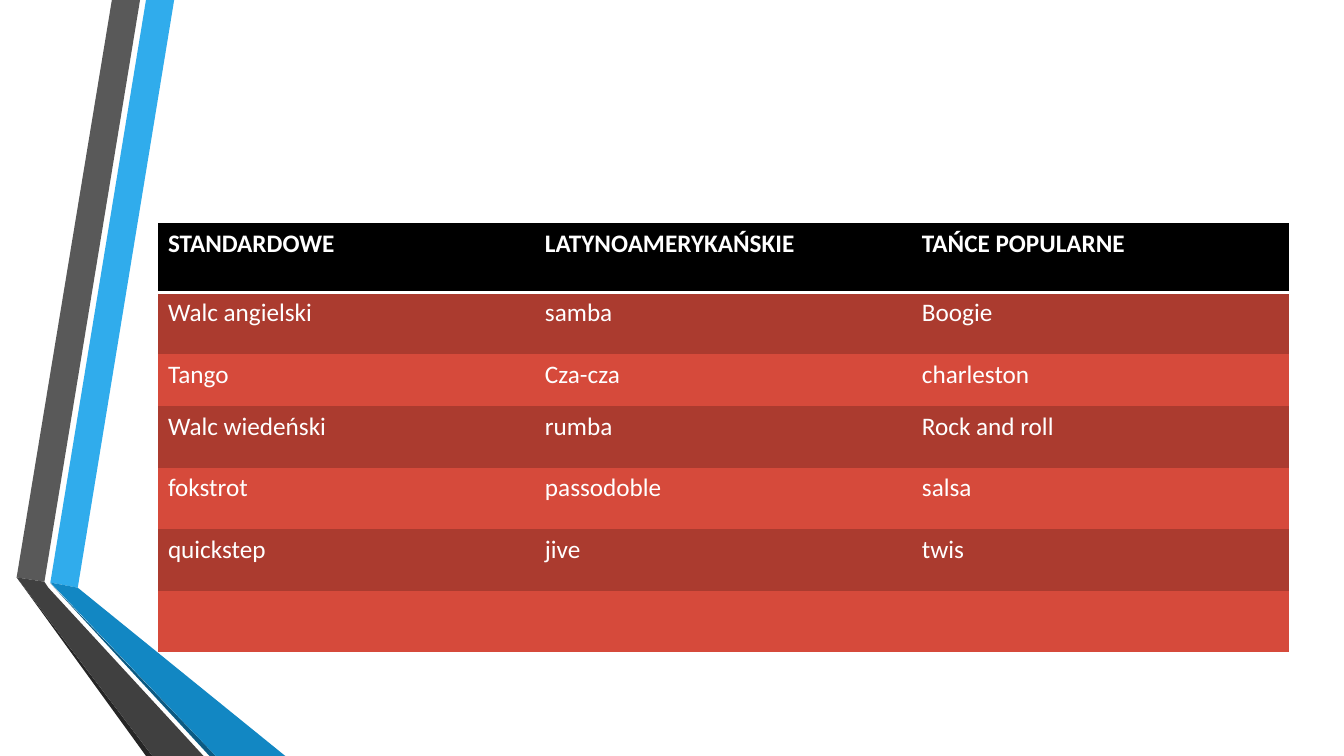
"""Build a slide with a table of ballroom, Latin and popular dances beside a folded ribbon."""
from lxml import etree
from pptx import Presentation
from pptx.dml.color import RGBColor
from pptx.oxml import parse_xml
from pptx.oxml.ns import nsdecls, qn
from pptx.util import Cm, Pt

WIDTH, HEIGHT = 33.87, 19.05
NO_STYLE = "{2D5ABB26-0587-4C30-8999-92F81FD0307C}"
WHITE, BLACK = "FFFFFF", "000000"
BANDS = ["AB3B2F", "D64A3B"]


def color(value):
    return RGBColor.from_string(value)


def write(cell, text, size=18, bold=False, font="Calibri", ink=WHITE):
    paragraph = cell.text_frame.paragraphs[0]
    run = paragraph.add_run()
    run.text = text
    run.font.size = Pt(size)
    run.font.bold = bold
    run.font.name = font
    run.font.color.rgb = color(ink)


presentation = Presentation()
presentation.slide_width = Cm(WIDTH)
presentation.slide_height = Cm(HEIGHT)
slide = presentation.slides.add_slide(presentation.slide_layouts[6])

ribbons = [
    ("30ACEC", [(1.27, 14.68), (1.96, 14.81), (4.39, 0), (3.68, 0)]),
    ("595959", [(3.53, 0), (2.82, 0), (0.42, 14.55), (1.12, 14.66)]),
    ("262626", [(0.42, 14.55), (3.68, HEIGHT), (3.84, HEIGHT)]),
    ("0C5A82", [(1.27, 14.7), (5.28, HEIGHT), (5.44, HEIGHT)]),
    ("1287C3", [(1.27, 14.68), (5.44, HEIGHT), (7.19, HEIGHT), (1.96, 14.81)]),
    ("404040", [(5.13, HEIGHT), (1.22, 14.81), (1.12, 14.66), (0.42, 14.55), (3.84, HEIGHT)]),
]
for fill, points in ribbons:
    corners = [(Cm(x), Cm(y)) for x, y in points]
    builder = slide.shapes.build_freeform(*corners[0])
    builder.add_line_segments(corners[1:], close=True)
    shape = builder.convert_to_shape()
    shape.shadow.inherit = False
    shape.fill.solid()
    shape.fill.fore_color.rgb = color(fill)
    shape.line.fill.background()

dances = [
    ["STANDARDOWE", "LATYNOAMERYKAŃSKIE", "TAŃCE POPULARNE"],
    ["Walc angielski", "samba", "Boogie"],
    ["Tango", "Cza-cza", "charleston"],
    ["Walc wiedeński", "rumba", "Rock and roll"],
    ["fokstrot", "passodoble", "salsa"],
    ["quickstep", "jive", "twis"],
    ["", "", ""],
]
row_heights = [1.75, 1.55, 1.32, 1.55, 1.55, 1.55, 1.55]
column_width = 9.5

frame = slide.shapes.add_table(
    len(dances), 3, Cm(3.98), Cm(5.62), Cm(3 * column_width), Cm(sum(row_heights)))
table = frame.table
table.horz_banding = False
frame._element.find(".//" + qn("a:tableStyleId")).text = NO_STYLE
for column in table.columns:
    column.width = Cm(column_width)

for row_index, names in enumerate(dances):
    header = row_index == 0
    table.rows[row_index].height = Cm(row_heights[row_index])
    for column_index, name in enumerate(names):
        cell = table.cell(row_index, column_index)
        cell.fill.solid()
        cell.fill.fore_color.rgb = color(BLACK if header else BANDS[(row_index - 1) % 2])
        if name:
            write(cell, name, bold=header)
        if header:
            border = parse_xml(f'<a:lnB {nsdecls("a")} w="{Pt(2)}"/>')
            solid = etree.SubElement(border, qn("a:solidFill"))
            etree.SubElement(solid, qn("a:srgbClr"), val=WHITE)
            cell._tc.get_or_add_tcPr().insert(0, border)

presentation.save("out.pptx")
